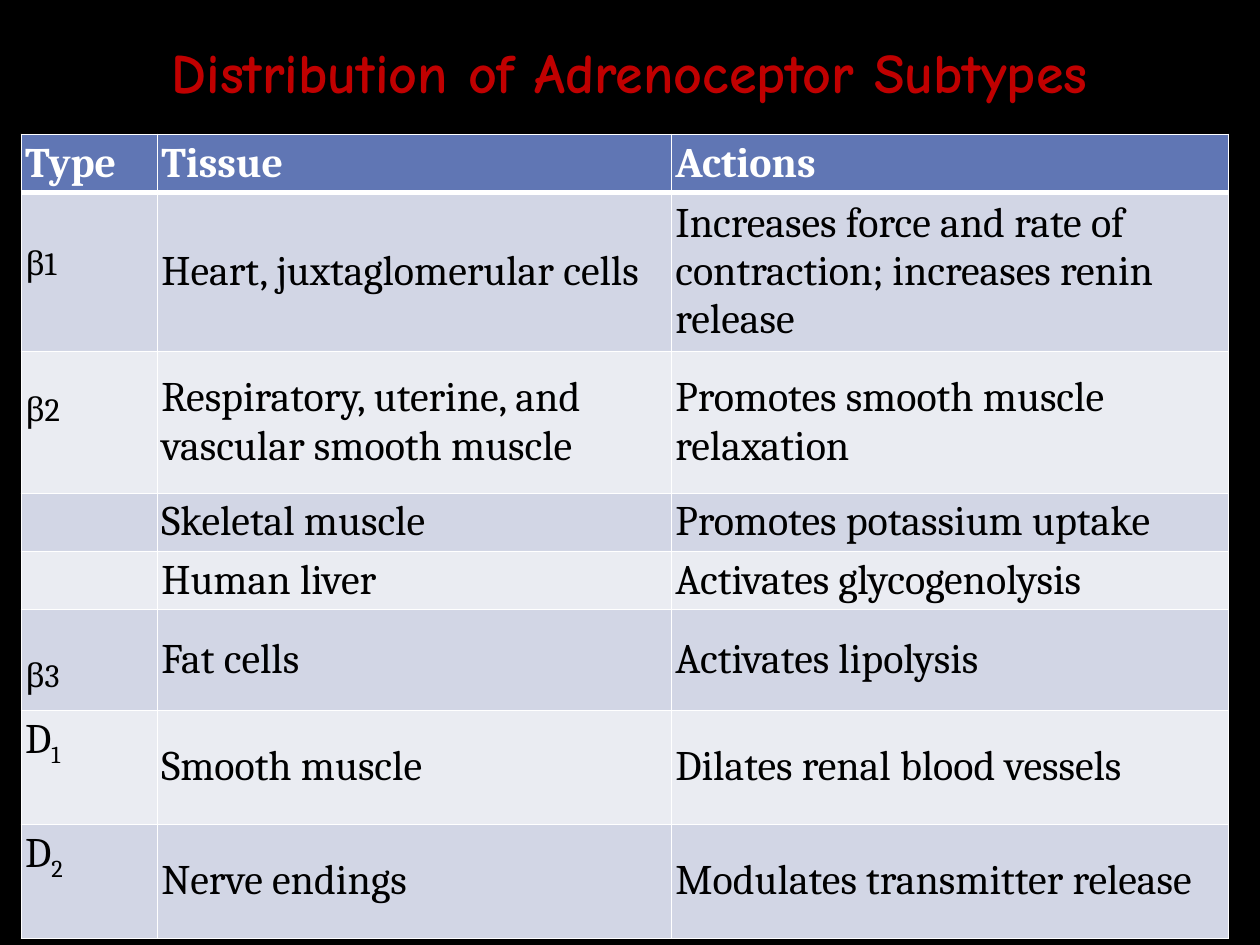
"""Build the slide listing adrenoceptor subtypes, their tissues and actions."""
from dataclasses import dataclass

from lxml import etree
from pptx import Presentation
from pptx.dml.color import RGBColor
from pptx.enum.text import MSO_ANCHOR, PP_ALIGN
from pptx.oxml.ns import qn
from pptx.util import Pt

MIDDLE = MSO_ANCHOR.MIDDLE
CENTER = PP_ALIGN.CENTER
WHITE, BLACK, RED, HEADER = "FFFFFF", "000000", "C00000", "6076B4"
BANDS = ("D2D6E5", "EAECF2")
INSET = 2.2
COL_WIDTHS = (77.8, 293.8, 318.2)


@dataclass
class Span:
    text: str
    size: float = 24
    baseline: int = 0


@dataclass
class Row:
    height: float
    kind: tuple[Span, ...]
    tissue: str
    actions: str
    lift: float = 0


def beta(number: int) -> tuple[Span, ...]:
    return (Span(f"β{number}", 32, -25000),)


def dopamine(number: int) -> tuple[Span, ...]:
    return (Span("D"), Span(str(number), baseline=-25000))


ROWS = (
    Row(32.2, (Span("Type"),), "Tissue", "Actions"),
    Row(87.4, beta(1), "Heart, juxtaglomerular cells",
        "Increases force and rate of contraction; increases renin release", 28),
    Row(78, beta(2), "Respiratory, uterine, and vascular smooth muscle",
        "Promotes smooth muscle relaxation", 33),
    Row(32.2, (), "Skeletal muscle", "Promotes potassium uptake"),
    Row(32.2, (), "Human liver", "Activates glycogenolysis"),
    Row(57.6, beta(3), "Fat cells", "Activates lipolysis"),
    Row(63.4, dopamine(1), "Smooth muscle", "Dilates renal blood vessels", 28),
    Row(63.4, dopamine(2), "Nerve endings", "Modulates transmitter release", 28),
)


def rgb(color: str) -> RGBColor:
    return RGBColor.from_string(color)


def set_all(target, values: dict) -> None:
    for name, value in values.items():
        setattr(target, name, value)


def add_run(p, span: Span, font: str, color: str, bold: bool) -> None:
    r = p.add_run()
    r.text = span.text
    set_all(r.font, {"name": font, "size": Pt(span.size), "bold": bold})
    r.font.color.rgb = rgb(color)
    if span.baseline:
        r.font._element.set("baseline", str(span.baseline))


def set_borders(cell, widths: dict[str, float]) -> None:
    tc_pr = cell._tc.get_or_add_tcPr()
    for i, (side, width) in enumerate(widths.items()):
        ln = etree.Element(qn(f"a:ln{side}"), w=str(Pt(width)))
        fill = etree.SubElement(ln, qn("a:solidFill"))
        etree.SubElement(fill, qn("a:srgbClr"), val=WHITE)
        tc_pr.insert(i, ln)


def fill_cell(cell, spans: tuple[Span, ...], row: int, lift: float) -> None:
    is_header = row == 0
    set_all(cell, {"vertical_anchor": MIDDLE, "margin_left": Pt(INSET),
                   "margin_right": Pt(INSET), "margin_top": Pt(INSET),
                   "margin_bottom": Pt(INSET + lift)})
    cell.fill.solid()
    cell.fill.fore_color.rgb = rgb(HEADER if is_header else BANDS[(row - 1) % 2])
    set_borders(cell, {"L": 1, "R": 1, "T": 3 if row == 1 else 1,
                       "B": 3 if is_header else 1})
    for span in spans:
        add_run(cell.text_frame.paragraphs[0], span, "Cambria",
                WHITE if is_header else BLACK, is_header)


def add_title(s, text: str) -> None:
    tf = s.shapes.add_textbox(Pt(36), Pt(21.6), Pt(648), Pt(38.2)).text_frame
    set_all(tf, {"word_wrap": True, "vertical_anchor": MIDDLE})
    p = tf.paragraphs[0]
    p.alignment = CENTER
    add_run(p, Span(text, 32), "Comic Neue", RED, True)


def add_receptor_table(s) -> None:
    table = s.shapes.add_table(
        len(ROWS), len(COL_WIDTHS), Pt(12.2), Pt(76.8), Pt(sum(COL_WIDTHS)),
        Pt(sum(row.height for row in ROWS))).table
    for column, width in zip(table.columns, COL_WIDTHS):
        column.width = Pt(width)
    for i, row in enumerate(ROWS):
        table.rows[i].height = Pt(row.height)
        fill_cell(table.cell(i, 0), row.kind, i, row.lift)
        for j, text in enumerate((row.tissue, row.actions), 1):
            fill_cell(table.cell(i, j), (Span(text),), i, 0)


def main() -> None:
    prs = Presentation()
    set_all(prs, {"slide_width": Pt(720), "slide_height": Pt(540)})
    s = prs.slides.add_slide(prs.slide_layouts[6])
    s.background.fill.solid()
    s.background.fill.fore_color.rgb = rgb(BLACK)
    add_title(s, "Distribution of Adrenoceptor Subtypes")
    add_receptor_table(s)
    prs.save("out.pptx")


if __name__ == "__main__":
    main()
